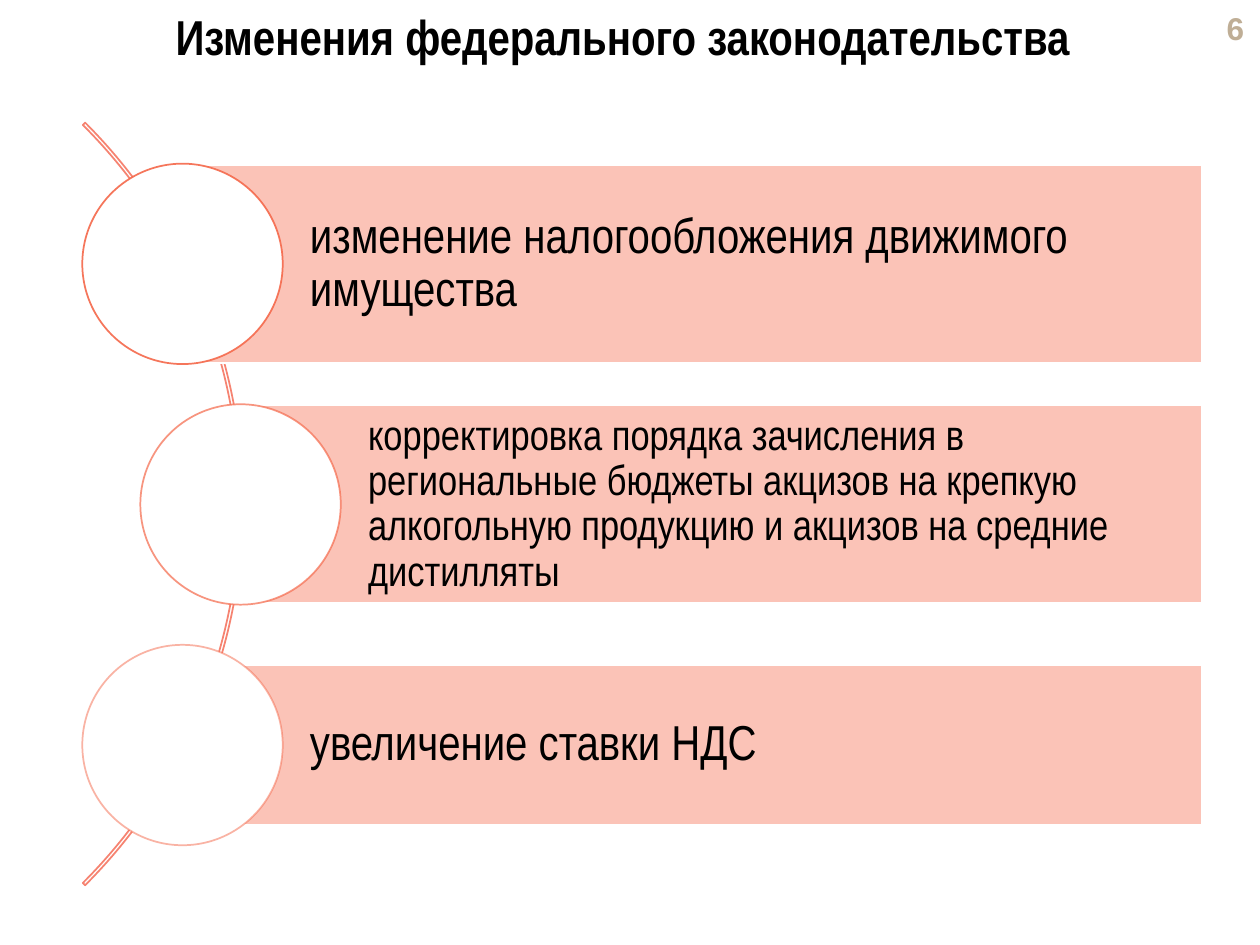
"""Build the slide on changes in federal legislation: three bars along an arc."""
from lxml import etree
from pptx import Presentation
from pptx.dml.color import RGBColor
from pptx.enum.shapes import MSO_SHAPE
from pptx.enum.text import MSO_ANCHOR, MSO_AUTO_SIZE, PP_ALIGN
from pptx.oxml.ns import qn
from pptx.util import Cm, Pt

BLOCK_ARC, OVAL, RECTANGLE = MSO_SHAPE.BLOCK_ARC, MSO_SHAPE.OVAL, MSO_SHAPE.RECTANGLE
TOP, MIDDLE = MSO_ANCHOR.TOP, MSO_ANCHOR.MIDDLE
LEFT, CENTER, RIGHT = PP_ALIGN.LEFT, PP_ALIGN.CENTER, PP_ALIGN.RIGHT
NO_AUTOFIT = MSO_AUTO_SIZE.NONE

COLORS = {"text": "000000", "number": "BFAE96", "bar": "FBC3B7",
          "white": "FFFFFF", "arc": "F68371", "ring": "F5684A"}
TITLE = "Изменения федерального законодательства "
PAGE_NUMBER = "6"
CHANGES = [
    {"text": "изменение налогообложения движимого имущества",
     "left": 3.68, "height": 3.99, "size": 28, "inset": 0.2, "opacity": 90},
    {"text": "корректировка порядка зачисления в региональные бюджеты акцизов "
             "на крепкую алкогольную продукцию и акцизов на средние дистилляты",
     "left": 4.85, "height": 3.99, "size": 24, "inset": 0.18, "opacity": 70},
    {"text": "увеличение ставки НДС",
     "left": 3.68, "height": 3.23, "size": 28, "inset": 0.2, "opacity": 50},
]
ARC_BOX = (-16.84, -0.71, 21.74, 21.74)
ARC_ADJUSTMENTS = (189, 27, 0.003)
BAR_RIGHT = 24.23
FIRST_CENTER, ROW_PITCH = 5.32, 4.85
DIAMETER = 4.04
TEXT_INDENT = 2.57


def write_text(shape, text, size=28, font="Arial Narrow", color="text", bold=False,
               align=LEFT, anchor=MIDDLE, spacing=0.9, insets=(0.25, 0.13, 0.25, 0.13)):
    frame = shape.text_frame
    frame.word_wrap = True
    frame.auto_size = NO_AUTOFIT
    frame.vertical_anchor = anchor
    (frame.margin_left, frame.margin_top,
     frame.margin_right, frame.margin_bottom) = map(Cm, insets)
    paragraph = frame.paragraphs[0]
    paragraph.alignment = align
    paragraph.line_spacing = spacing
    paragraph.space_before = Pt(0)
    run = paragraph.add_run()
    run.text = text
    run.font.name = font
    run.font.size = Pt(size)
    run.font.bold = bold
    run.font.color.rgb = RGBColor.from_string(COLORS[color])


def add_figure(slide, kind, box, line, fill=None, opacity=100):
    shape = slide.shapes.add_shape(kind, *map(Cm, box))
    shape.shadow.inherit = False
    if fill:
        shape.fill.solid()
        shape.fill.fore_color.rgb = RGBColor.from_string(COLORS[fill])
    else:
        shape.fill.background()
    shape.line.width = Pt(1)
    shape.line.color.rgb = RGBColor.from_string(COLORS[line])
    if opacity < 100:
        line_color = shape.line._ln.find(".//" + qn("a:srgbClr"))
        etree.SubElement(line_color, qn("a:alpha"), val=str(opacity * 1000))
    return shape


def add_change(slide, row, change):
    center = FIRST_CENTER + row * ROW_PITCH
    left, height, inset = change["left"], change["height"], change["inset"]
    bar = add_figure(slide, RECTANGLE,
                     (left, center - height / 2, BAR_RIGHT - left, height), "white", "bar")
    write_text(bar, change["text"], size=change["size"],
               insets=(TEXT_INDENT, inset, inset, inset))
    radius = DIAMETER / 2
    add_figure(slide, OVAL, (left - radius, center - radius, DIAMETER, DIAMETER),
               "ring", "white", change["opacity"])


def main():
    presentation = Presentation()
    presentation.slide_width, presentation.slide_height = Cm(25.4), Cm(19.05)
    slide = presentation.slides.add_slide(presentation.slide_layouts[5])

    title = slide.shapes.title
    title.left, title.top, title.width, title.height = map(Cm, (1.42, 0.13, 22.48, 1.6))
    write_text(title, TITLE, bold=True, align=CENTER, anchor=TOP)

    number = slide.shapes.add_textbox(*map(Cm, (23.7, 0.13, 1.63, 0.86)))
    write_text(number, PAGE_NUMBER, size=18, font="Arial", color="number",
               bold=True, align=RIGHT, spacing=1.0)

    arc = add_figure(slide, BLOCK_ARC, ARC_BOX, "arc")
    for index, value in enumerate(ARC_ADJUSTMENTS):
        arc.adjustments[index] = value
    for row, change in enumerate(CHANGES):
        add_change(slide, row, change)

    presentation.save("out.pptx")


if __name__ == "__main__":
    main()
